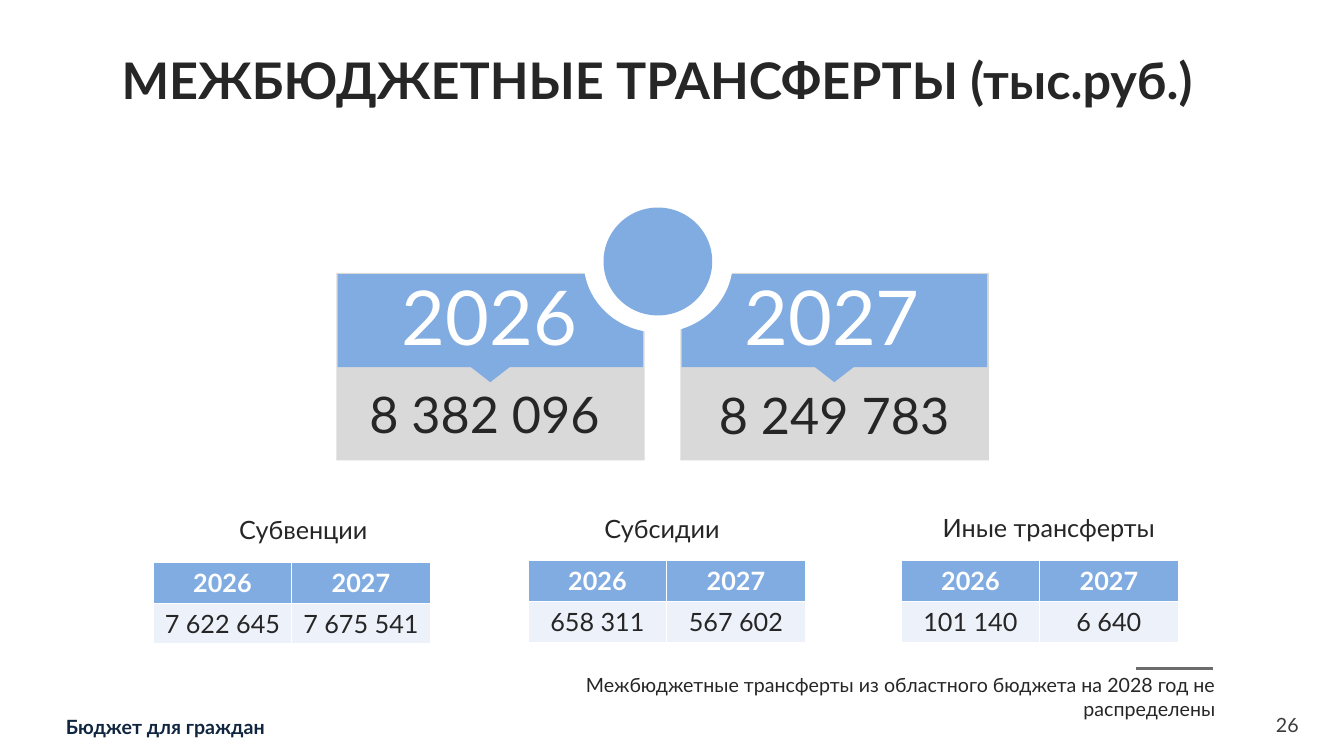
"""Build the slide on interbudgetary transfers for 2026 and 2027."""
from dataclasses import dataclass

from lxml import etree
from pptx import Presentation
from pptx.dml.color import RGBColor
from pptx.enum.shapes import MSO_CONNECTOR as CONNECTOR, MSO_SHAPE as SHAPE
from pptx.enum.text import MSO_ANCHOR as ANCHOR, PP_ALIGN as ALIGN
from pptx.oxml.ns import qn
from pptx.util import Cm, Pt


@dataclass(frozen=True)
class Theme:
    font: str = "Lato"
    white: str = "FFFFFF"
    blue: str = "81ACE2"
    gray: str = "D9D9D9"
    pale: str = "EDF1FA"
    text: str = "262626"
    navy: str = "10253F"
    number: str = "3C3C3C"
    rule: str = "6C6C6C"
    year_size: int = 54
    title_size: int = 36
    label_size: int = 18
    note_size: int = 14


theme = Theme()


def write(tf, text, size, color=theme.text, bold=False, align=ALIGN.CENTER):
    tf.text = text
    tf.word_wrap = True
    p = tf.paragraphs[0]
    p.alignment = align
    font = p.runs[0].font
    font.name, font.size, font.bold = theme.font, Pt(size), bold
    font.color.rgb = RGBColor.from_string(color)


def add_block(kind, left, top, width, height, color):
    sp = slide.shapes.add_shape(kind, Cm(left), Cm(top), Cm(width), Cm(height))
    sp.shadow.inherit = False
    sp.fill.solid()
    sp.fill.fore_color.rgb = RGBColor.from_string(color)
    sp.line.fill.background()
    return sp


prs = Presentation()
prs.slide_width, prs.slide_height = Cm(33.87), Cm(19.05)
slide = prs.slides.add_slide(prs.slide_layouts[5])

title = slide.shapes.title
title.left, title.top, title.width, title.height = Cm(1.47), Cm(1.12), Cm(30.18), Cm(1.93)
write(title.text_frame, "МЕЖБЮДЖЕТНЫЕ ТРАНСФЕРТЫ (тыс.руб.)", theme.title_size, bold=True)
title.text_frame.vertical_anchor = ANCHOR.MIDDLE
title.text_frame.paragraphs[0].line_spacing = 0.9

for left in (17.15, 8.48):
    add_block(SHAPE.RECTANGLE, left, 6.88, 7.77, 4.72, theme.gray)
    add_block(SHAPE.RECTANGLE, left + 0.03, 6.91, 7.7, 2.34, theme.blue)
    pointer = add_block(SHAPE.ISOSCELES_TRIANGLE, left + 2.01, 8.18, 3.73, 1.45, theme.blue)
    pointer.rotation = 180

add_block(SHAPE.OVAL, 14.71, 4.8, 3.76, 3.58, theme.white)
add_block(SHAPE.OVAL, 15.21, 5.23, 2.74, 2.72, theme.blue)

years = ("2026", "2027")
labels = [
    ("2026", 8.66, 6.68, 7.34, 2.57, theme.year_size, theme.white),
    ("2027", 17.3, 6.68, 7.34, 2.57, theme.year_size, theme.white),
    ("8 382 096", 8.54, 9.53, 7.34, 1.8, theme.title_size, theme.text),
    ("8 249 783", 17.35, 9.55, 7.34, 1.8, theme.title_size, theme.text),
    ("Субвенции", 5.64, 12.83, 4.01, 1.02, theme.label_size, theme.text),
    ("Субсидии", 14.68, 12.8, 4.01, 1.02, theme.label_size, theme.text),
    ("Иные трансферты", 22.58, 12.78, 7.7, 1.02, theme.label_size, theme.text),
]
for text, left, top, width, height, size, color in labels:
    box = slide.shapes.add_textbox(Cm(left), Cm(top), Cm(width), Cm(height))
    write(box.text_frame, text, size, color)

transfers = [
    (3.86, 14.17, ("7 622 645", "7 675 541")),
    (13.31, 14.12, ("658 311", "567 602")),
    (22.71, 14.12, ("101 140", "6 640")),
]
for left, top, amounts in transfers:
    frame = slide.shapes.add_table(2, 2, Cm(left), Cm(top), Cm(6.98), Cm(2.06))
    for row, values in enumerate((years, amounts)):
        for col, value in enumerate(values):
            cell = frame.table.cell(row, col)
            header = row == 0
            cell.fill.solid()
            cell.fill.fore_color.rgb = RGBColor.from_string(theme.blue if header else theme.pale)
            write(cell.text_frame, value, theme.label_size,
                  theme.white if header else theme.text, bold=header)

rule = slide.shapes.add_connector(CONNECTOR.STRAIGHT, Cm(28.63), Cm(16.84), Cm(30.56), Cm(16.84))
rule.line.color.rgb = RGBColor.from_string(theme.rule)
rule.line.width = Pt(2)
etree.SubElement(rule._element.spPr, qn("a:effectLst"))

note = slide.shapes.add_textbox(Cm(12.24), Cm(16.84), Cm(18.64), Cm(1.45))
write(note.text_frame, "Межбюджетные трансферты из областного бюджета на 2028 год не распределены",
      theme.note_size, align=ALIGN.RIGHT)

footers = [
    ("Бюджет для граждан", 1.66, 18.01, 28.78, theme.navy, True, ALIGN.LEFT),
    ("26", 31.83, 17.96, 0.9, theme.number, False, ALIGN.RIGHT),
]
for text, left, top, width, color, bold, align in footers:
    box = slide.shapes.add_textbox(Cm(left), Cm(top), Cm(width), Cm(0.61))
    tf = box.text_frame
    tf.margin_left = tf.margin_top = tf.margin_right = tf.margin_bottom = 0
    write(tf, text, theme.note_size, color, bold, align)

prs.save("out.pptx")
